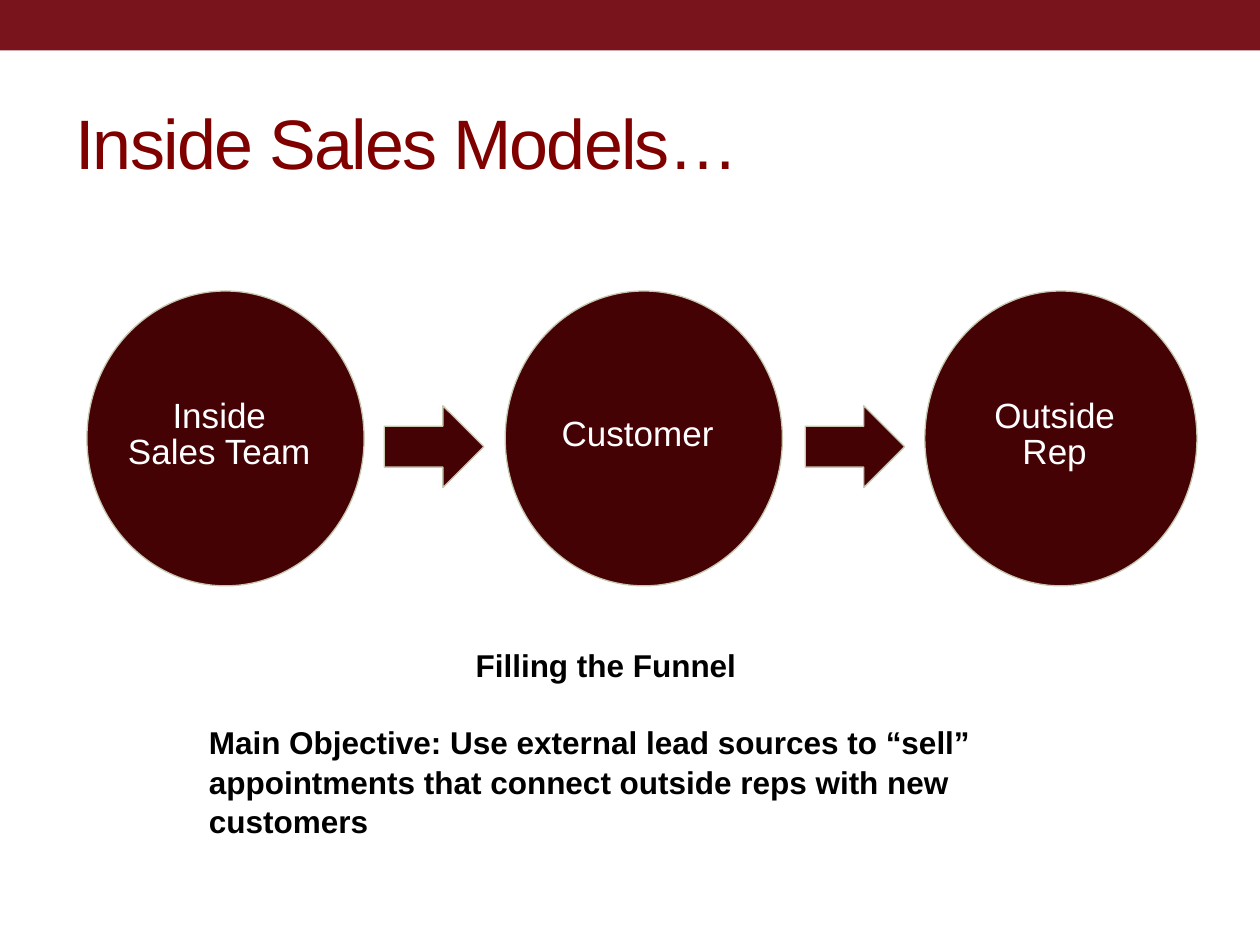
from pptx import Presentation
from pptx.dml.color import RGBColor
from pptx.enum.shapes import MSO_SHAPE
from pptx.enum.text import MSO_ANCHOR, PP_ALIGN
from pptx.util import Inches, Pt

DARK, EDGE = "450205", "C8C8B1"


def color(value):
    return RGBColor.from_string(value)


def set_values(target, values):
    for name, value in values.items():
        setattr(target, name, value)


def write(para, text, ink, font, kerning=None, **layout):
    """Fill a paragraph with one formatted span."""
    set_values(para, layout)
    span = para.add_run()
    span.text = text
    set_values(span.font, {"name": "Arial", **font})
    span.font.color.rgb = color(ink)
    for name, value in (kerning or {}).items():
        span.font._element.set(name, value)


def add_figure(page, kind, place, fill, edge=None):
    figure = page.shapes.add_shape(kind, *map(Inches, place))
    figure.shadow.inherit = False
    figure.fill.solid()
    figure.fill.fore_color.rgb = color(fill)
    if edge:
        figure.line.color.rgb = color(edge)
        figure.line.width = Pt(0.75)
    else:
        figure.line.fill.background()
    return figure


def add_stage(page, left, width, label):
    circle = add_figure(page, MSO_SHAPE.OVAL, (left, 2.31, width, 2.34), DARK, EDGE)
    frame = circle.text_frame
    set_values(frame, {
        "word_wrap": True, "vertical_anchor": MSO_ANCHOR.MIDDLE,
        "margin_left": 0, "margin_top": 0,
        "margin_right": Inches(0.1), "margin_bottom": Inches(0.05)})
    write(frame.paragraphs[0], label, "FFFFFF", {"size": Pt(20)},
          {"kern": "1200"}, alignment=PP_ALIGN.CENTER, line_spacing=0.86)


def add_text_frame(page, place, anchor):
    box = page.shapes.add_textbox(*map(Inches, place))
    set_values(box.text_frame, {"word_wrap": True, "vertical_anchor": anchor})
    return box.text_frame


def main():
    deck = Presentation()
    set_values(deck, {"slide_width": Inches(10), "slide_height": Inches(7.5)})
    page = deck.slides.add_slide(deck.slide_layouts[6])

    # Top band and title
    add_figure(page, MSO_SHAPE.RECTANGLE, (0, 0, 10, 0.4), "7A141C")
    title = add_text_frame(page, (0.5, 0.58, 9, 1.08), MSO_ANCHOR.MIDDLE)
    write(title.paragraphs[0], "Inside Sales Models…", "800000",
          {"size": Pt(40)}, {"kern": "1200", "spc": "-100"})

    # Sales flow
    stages = [(0.69, 2.2, "Inside Sales Team"), (4.01, 2.2, "Customer"),
              (7.34, 2.16, "Outside Rep")]
    for stage in stages:
        add_stage(page, *stage)
    for left in (3.05, 6.39):
        add_figure(page, MSO_SHAPE.RIGHT_ARROW, (left, 3.22, 0.79, 0.65), DARK, EDGE)

    # Objective
    notes = add_text_frame(page, (1.56, 5.06, 6.5, 1.62), MSO_ANCHOR.TOP)
    bold = {"size": Pt(18), "bold": True}
    write(notes.paragraphs[0], "Filling the Funnel", "000000", bold,
          alignment=PP_ALIGN.CENTER, line_spacing=1.05)
    write(notes.add_paragraph(),
          "Main Objective: Use external lead sources to “sell” appointments "
          "that connect outside reps with new customers", "000000", bold,
          line_spacing=1.05, space_before=Pt(21.5))

    deck.save("out.pptx")


if __name__ == "__main__":
    main()
